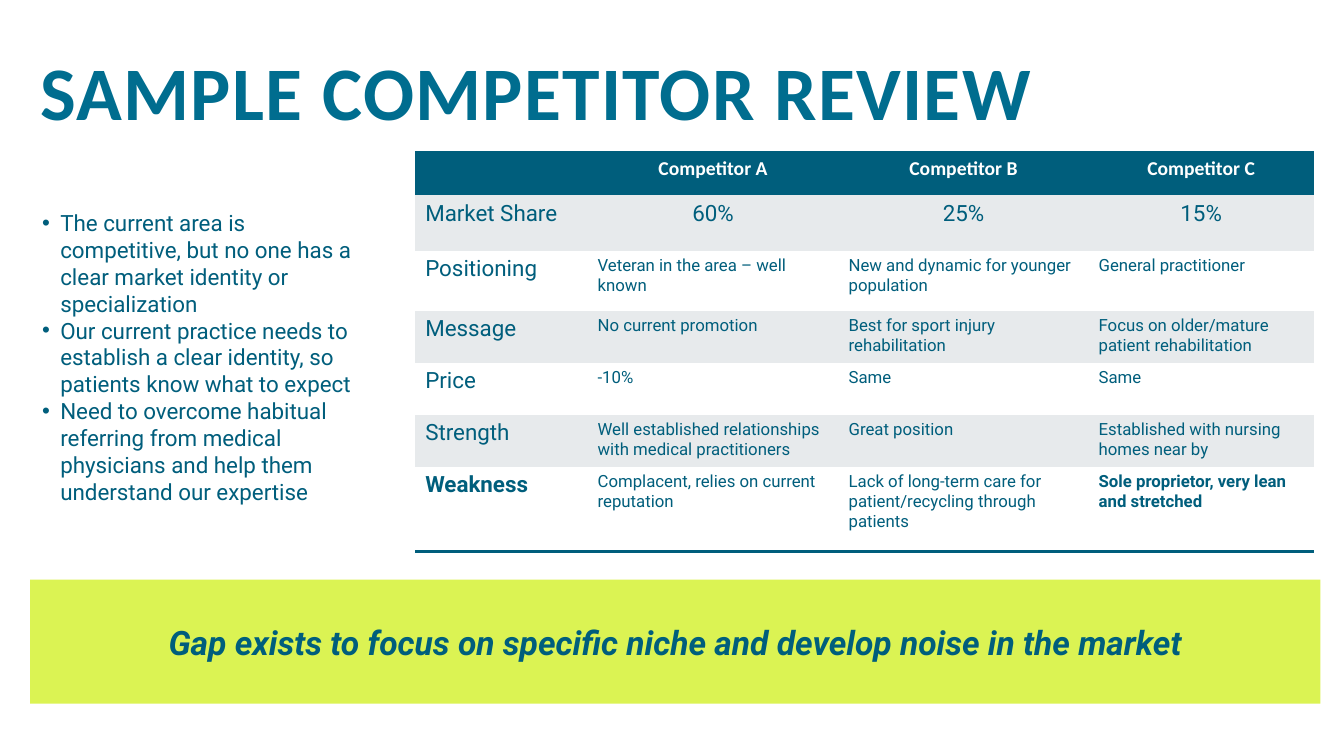
from pptx import Presentation
from pptx.dml.color import RGBColor
from pptx.enum.shapes import MSO_SHAPE as Shape
from pptx.enum.text import MSO_ANCHOR as Anchor, MSO_AUTO_SIZE as AutoSize, PP_ALIGN as Align
from pptx.oxml.ns import qn
from pptx.util import Pt
from lxml.etree import SubElement

TITLE = "SAMPLE COMPETITOR REVIEW"
FINDINGS = [
    "The current area is competitive, but no one has a clear market identity or specialization",
    "Our current practice needs to establish a clear identity, so patients know what to expect",
    "Need to overcome habitual referring from medical physicians and help them understand our expertise",
]
CONCLUSION = "Gap exists to focus on specific niche and develop noise in the market"
REVIEW = [
    ("", "Competitor A", "Competitor B", "Competitor C"),
    ("Market Share", "60%", "25%", "15%"),
    ("Positioning", "Veteran in the area – well known",
     "New and dynamic for younger population", "General practitioner"),
    ("Message", "No current promotion", "Best for sport injury rehabilitation",
     "Focus on older/mature patient rehabilitation"),
    ("Price", "-10%", "Same", "Same"),
    ("Strength", "Well established relationships with medical practitioners",
     "Great position", "Established with nursing homes near by"),
    ("Weakness", "Complacent, relies on current reputation",
     "Lack of long-term care for patient/recycling through patients",
     "Sole proprietor, very lean and stretched"),
]
BOLD_CELLS = {"Weakness", "Sole proprietor, very lean and stretched"}
COLUMN_WIDTHS = [123.1, 179.3, 178.6, 160.9]
ROW_HEIGHTS = [31, 39.6, 43, 37.2, 37.2, 37.2, 60.2]

NAVY, TEAL, LIME, GREY, WHITE = "005E7C", "006D8F", "DBF353", "E7EAEC", "FFFFFF"
LEFT = 21.6
BODY = {"name": "Roboto", "size": Pt(16), "bold": False}
DETAIL = {**BODY, "size": Pt(12)}
HEADER = {"name": "Calibri", "size": Pt(14), "bold": True}
HEADLINE = {"name": "Calibri", "size": Pt(54), "bold": True}
BANNER = {"name": "Roboto", "size": Pt(24), "bold": True, "italic": True}


def paint(color_format, color):
    color_format.rgb = RGBColor.from_string(color)


def fill(target, color):
    target.fill.solid()
    paint(target.fill.fore_color, color)


def write(paragraph, text, style, color, align=Align.LEFT):
    run = paragraph.add_run()
    run.text = text
    paragraph.alignment = align
    for attribute, value in style.items():
        setattr(run.font, attribute, value)
    paint(run.font.color, color)
    return run


def rule_cell(cell, ruled_sides):
    """Draw the named sides of a cell and clear the others."""
    properties = cell._tc.get_or_add_tcPr()
    for side in "LRTB":
        line = SubElement(properties, qn(f"a:ln{side}"), w=str(Pt(2)))
        if side in ruled_sides:
            solid = SubElement(line, qn("a:solidFill"))
            SubElement(solid, qn("a:srgbClr"), val=NAVY)
        else:
            SubElement(line, qn("a:noFill"))


def add_title(slide):
    title = slide.shapes.title
    title.left, title.top, title.width, title.height = Pt(LEFT), Pt(11.5), Pt(893.5), Pt(118)
    frame = title.text_frame
    frame.auto_size, frame.vertical_anchor = AutoSize.NONE, Anchor.MIDDLE
    heading = frame.paragraphs[0]
    heading.line_spacing = 0.8
    run = write(heading, TITLE, HEADLINE, TEAL)
    run.font._element.set("spc", "100")


def add_review(slide):
    table = slide.shapes.add_table(
        len(REVIEW), len(COLUMN_WIDTHS), Pt(296.6), Pt(108.5),
        Pt(sum(COLUMN_WIDTHS)), Pt(sum(ROW_HEIGHTS))).table
    table.horz_banding = False
    for column, width in zip(table.columns, COLUMN_WIDTHS):
        column.width = Pt(width)
    for row, height in zip(table.rows, ROW_HEIGHTS):
        row.height = Pt(height)
    for r, entries in enumerate(REVIEW):
        for c, entry in enumerate(entries):
            cell = table.cell(r, c)
            is_header = r == 0
            rule_cell(cell, "TB" if is_header else "B" if r == len(REVIEW) - 1 else "")
            fill(cell, NAVY if is_header else GREY if r % 2 else WHITE)
            if not entry:
                continue
            style = HEADER if is_header else BODY if c == 0 or r == 1 else DETAIL
            if entry in BOLD_CELLS:
                style = {**style, "bold": True}
            write(cell.text_frame.paragraphs[0], entry, style,
                  WHITE if is_header else NAVY,
                  Align.CENTER if c and r < 2 else Align.LEFT)


def add_findings(slide):
    frame = slide.shapes.add_textbox(Pt(LEFT), Pt(124), Pt(248.4), Pt(262)).text_frame
    frame.word_wrap, frame.vertical_anchor = True, Anchor.MIDDLE
    for i, finding in enumerate(FINDINGS):
        paragraph = frame.add_paragraph() if i else frame.paragraphs[0]
        properties = paragraph._p.get_or_add_pPr()
        properties.set("marL", str(Pt(14.4)))
        properties.set("indent", str(Pt(-13)))
        SubElement(properties, qn("a:buFont"), typeface="Arial")
        SubElement(properties, qn("a:buChar"), char="•")
        write(paragraph, finding, BODY, NAVY)


def add_conclusion(slide):
    banner = slide.shapes.add_shape(Shape.RECTANGLE, Pt(LEFT), Pt(414), Pt(921.6), Pt(88.6))
    banner.shadow.inherit = False
    fill(banner, LIME)
    banner.line.fill.background()
    banner.text_frame.vertical_anchor = Anchor.MIDDLE
    write(banner.text_frame.paragraphs[0], CONCLUSION, BANNER, NAVY, Align.CENTER)


def main():
    deck = Presentation()
    deck.slide_width, deck.slide_height = Pt(960), Pt(540)
    slide = deck.slides.add_slide(deck.slide_layouts[5])
    fill(slide.background, WHITE)
    for add_part in (add_review, add_conclusion, add_title, add_findings):
        add_part(slide)
    deck.save("out.pptx")


if __name__ == "__main__":
    main()
